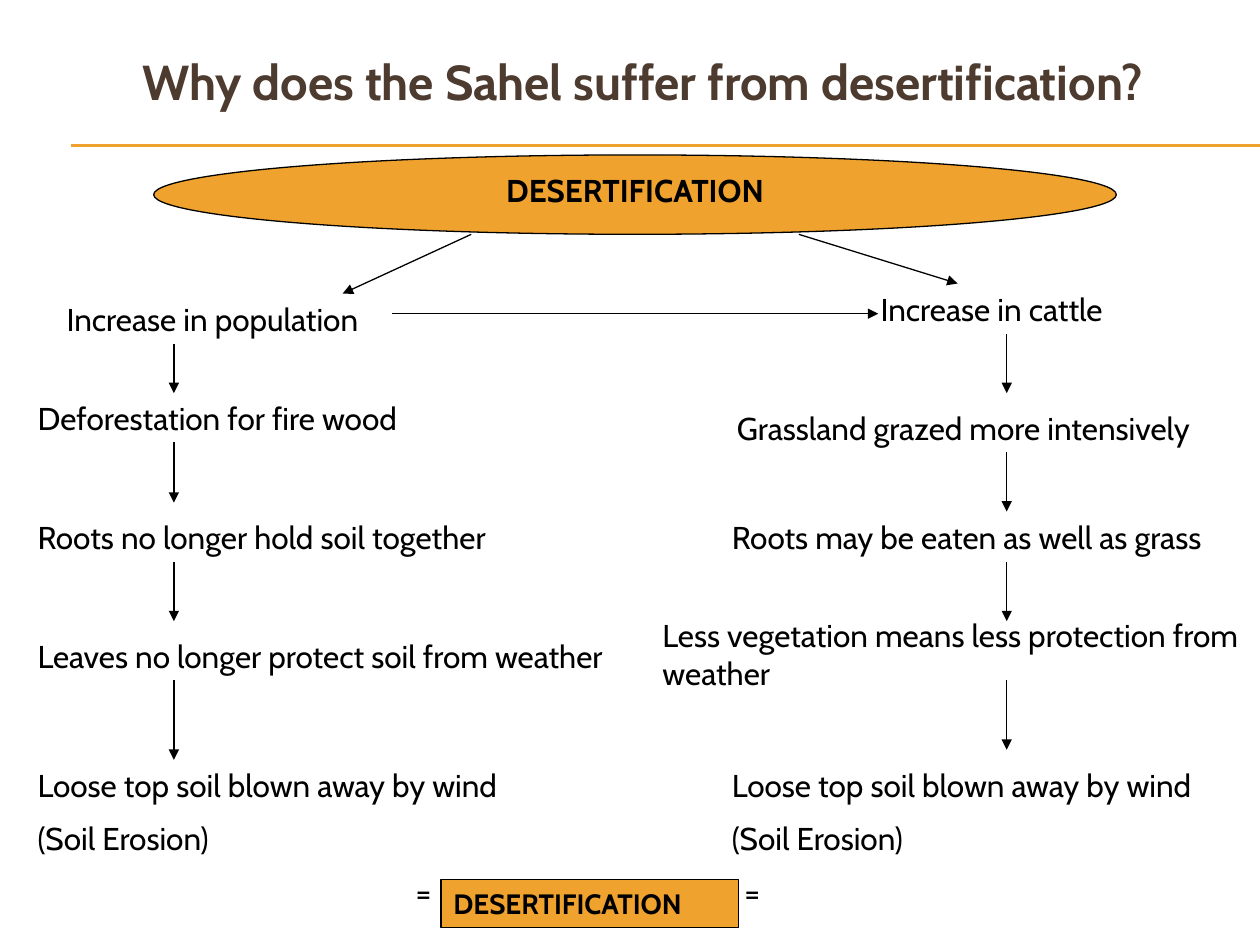
"""Build the Sahel desertification flow chart slide."""
from lxml import etree
from pptx import Presentation
from pptx.dml.color import RGBColor
from pptx.enum.shapes import MSO_CONNECTOR as CONN, MSO_SHAPE as SHAPE
from pptx.enum.text import MSO_ANCHOR as ANCHOR, PP_ALIGN as ALIGN
from pptx.oxml.ns import qn
from pptx.util import Inches, Pt

BLACK, ORANGE, BROWN = "000000", "F0A22E", "4E3B30"
EROSION = ["Loose top soil blown away by wind", "(Soil Erosion)", "="]
TITLE = ("Why does the Sahel suffer from desertification?", (0.2, 0.36, 9.8, 1.5))
CAUSE = ("DESERTIFICATION", (1.93, 1.31, 6.22, 0.4))
OVAL = (1.22, 1.23, 7.64, 0.63)
RESULT = ("DESERTIFICATION", (3.5, 6.98, 2.36, 0.38))

STEPS = [
    (["Increase in population"], (0.43, 2.33, 3.31, 0.4)),
    (["Deforestation for fire wood"], (0.2, 3.12, 3.31, 0.4)),
    (["Roots no longer hold soil together"], (0.2, 4.06, 4.73, 0.4)),
    (["Leaves no longer protect soil from weather"], (0.2, 5.01, 5.75, 0.4)),
    (["Increase in cattle"], (6.89, 2.25, 2.91, 0.4)),
    (["Grassland grazed more intensively"], (5.75, 3.2, 4.25, 0.4)),
    (["Roots may be eaten as well as grass"], (5.71, 4.06, 4.61, 0.4)),
    (["Less vegetation means less protection from weather"], (5.16, 4.84, 4.84, 0.7)),
]
OUTCOMES = [((0.2, 6.03, 4.88, 1.3), 3), ((5.71, 6.03, 4.29, 1.3), 0.1)]
RULES = [1.15, 1.16]
LINKS = [(3.74, 1.86, 2.72, 2.33), (6.34, 1.86, 7.6, 2.25), (3.11, 2.49, 6.97, 2.49)]
DROPS = {
    1.38: [(2.73, 3.12), (3.51, 3.99), (4.46, 4.93), (5.4, 6.03)],
    7.99: [(2.65, 3.12), (3.59, 4.06), (4.46, 4.93), (5.4, 5.95)],
}


def rgb(color):
    return RGBColor.from_string(color)


def write(sp, lines, size=18, color=BLACK, bold=False, align=ALIGN.LEFT):
    tf = sp.text_frame
    tf.word_wrap = True
    for i, line in enumerate(lines):
        p = tf.paragraphs[0] if i == 0 else tf.add_paragraph()
        p.alignment = align
        if i:
            p.space_before = Pt(9)
        r = p.add_run()
        r.text = line
        r.font.color.rgb = rgb(color)
        for name, value in {"name": "Cabin", "size": Pt(size), "bold": bold}.items():
            setattr(r.font, name, value)
    return tf


def add_text(s, lines, box, **fmt):
    return write(s.shapes.add_textbox(*map(Inches, box)), lines, **fmt)


def add_block(s, kind, box):
    sp = s.shapes.add_shape(kind, *map(Inches, box))
    sp.shadow.inherit = False
    sp.fill.solid()
    sp.fill.fore_color.rgb = rgb(ORANGE)
    sp.line.color.rgb = rgb(BLACK)
    sp.line.width = Pt(0.75)
    return sp


def add_line(s, ends, color=BLACK, arrow=True):
    cx = s.shapes.add_connector(CONN.STRAIGHT, *map(Inches, ends))
    cx.line.color.rgb = rgb(color)
    cx.line.width = Pt(0.75)
    if arrow:
        etree.SubElement(cx.line._get_or_add_ln(), qn("a:tailEnd"), type="triangle")
    etree.SubElement(cx._element.spPr, qn("a:effectLst"))


def main():
    prs = Presentation()
    prs.slide_width, prs.slide_height = Inches(10), Inches(7.5)
    s = prs.slides.add_slide(prs.slide_layouts[6])

    for y in RULES:
        add_line(s, (0.56, y, 10, y), ORANGE, arrow=False)
    title, box = TITLE
    add_text(s, [title], box, size=28, color=BROWN, bold=True, align=ALIGN.CENTER)
    add_block(s, SHAPE.OVAL, OVAL)
    cause, box = CAUSE
    add_text(s, [cause], box, bold=True, align=ALIGN.CENTER)

    drops = [(x, top, x, end) for x, spans in DROPS.items() for top, end in spans]
    for ends in LINKS + drops:
        add_line(s, ends)
    for lines, box in STEPS:
        add_text(s, lines, box)
    for box, indent in OUTCOMES:
        tf = add_text(s, EROSION, box)
        tf.paragraphs[-1]._p.get_or_add_pPr().set("marL", str(Inches(indent)))

    result, box = RESULT
    tf = write(add_block(s, SHAPE.RECTANGLE, box), [result], size=16, bold=True)
    tf.vertical_anchor = ANCHOR.MIDDLE
    prs.save("out.pptx")


if __name__ == "__main__":
    main()
